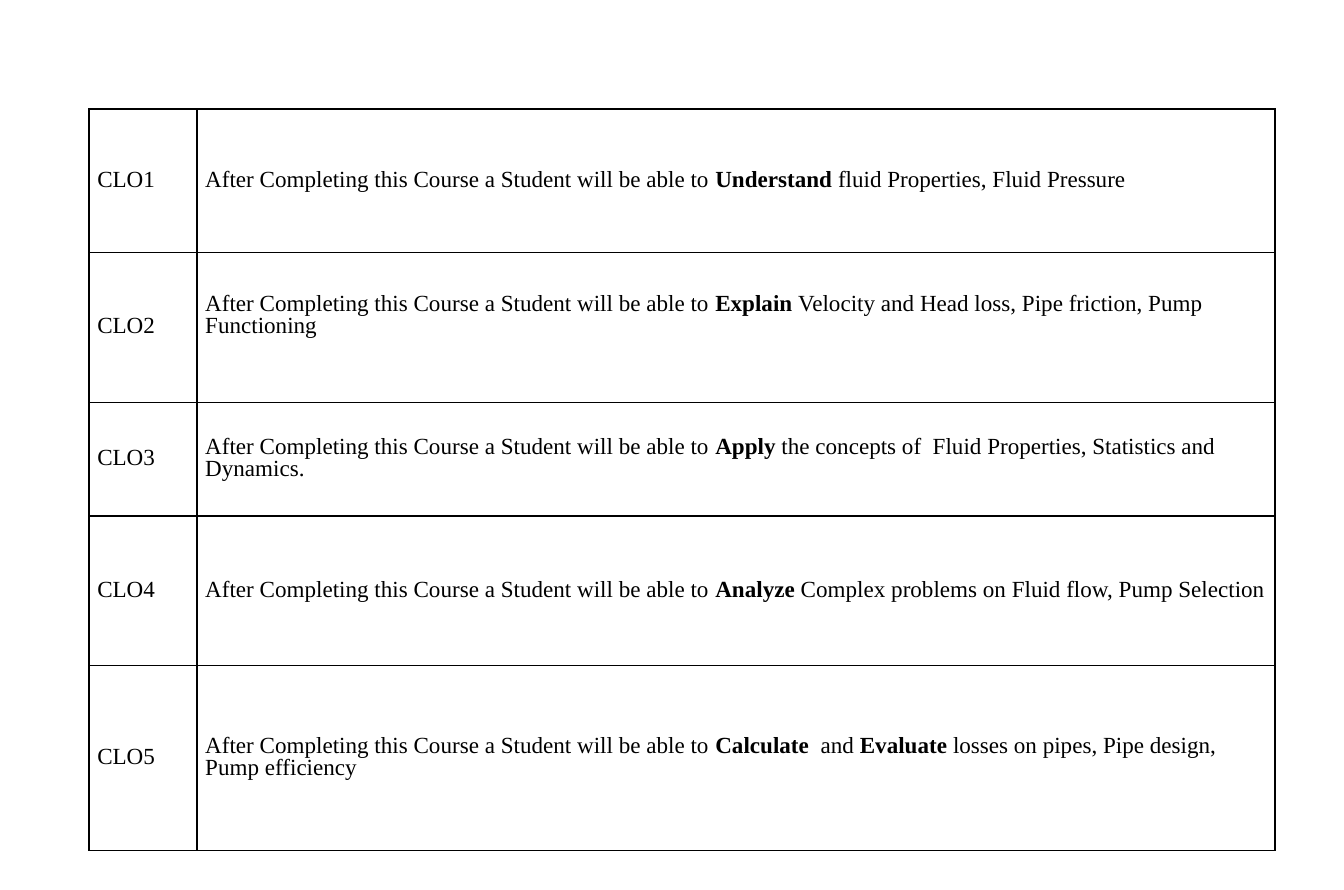
from lxml import etree
from pptx import Presentation
from pptx.dml.color import RGBColor
from pptx.enum.text import MSO_ANCHOR
from pptx.oxml.ns import qn
from pptx.util import Inches, Pt

MIDDLE = MSO_ANCHOR.MIDDLE
BLACK = "000000"
COLUMN_WIDTHS = [0.91, 9.09]
STEM = ("After Completing this Course a Student will be able to ", False)
OUTCOMES = [
    (1.21, 13.5, 0, [("Understand ", True), ("fluid Properties, Fluid Pressure", False)]),
    (1.26, 13.5, 0.19, [("Explain ", True),
                        ("Velocity and Head loss, Pipe friction, Pump Functioning", False)]),
    (0.96, 13.7, 0, [("Apply", True),
                     (" the concepts of  Fluid Properties, Statistics and Dynamics.", False)]),
    (1.26, 13.5, 0, [("Analyze", True),
                     (" Complex problems on Fluid flow, Pump Selection", False)]),
    (1.56, 13.5, 0, [("Calculate", True), ("  and ", False), ("Evaluate ", True),
                     ("losses on pipes, Pipe design, Pump efficiency", False)]),
]


def color(hex_value):
    return RGBColor.from_string(hex_value)


def apply_format(target, values):
    for attribute, value in values.items():
        setattr(target, attribute, value)


def add_borders(cell):
    properties = cell._tc.get_or_add_tcPr()
    for side in ("lnL", "lnR", "lnT", "lnB"):
        border = etree.SubElement(properties, qn(f"a:{side}"), w=str(Pt(1)))
        fill = etree.SubElement(border, qn("a:solidFill"))
        etree.SubElement(fill, qn("a:srgbClr"), val=BLACK)


def fill_cell(cell, phrases, spacing, bottom):
    add_borders(cell)
    cell.fill.background()
    apply_format(cell, {
        "vertical_anchor": MIDDLE, "margin_left": 0, "margin_right": 0,
        "margin_top": 0, "margin_bottom": Inches(bottom),
    })
    paragraph = cell.text_frame.paragraphs[0]
    paragraph.line_spacing = Pt(spacing)
    paragraph._p.get_or_add_pPr().set("marL", str(Inches(0.07)))
    for phrase, bold in phrases:
        run = paragraph.add_run()
        run.text = phrase
        apply_format(run.font, {"name": "Times New Roman", "size": Pt(14), "bold": bold})
        run.font.color.rgb = color(BLACK)


def add_outcomes_table(slide, left, top, width, height):
    table = slide.shapes.add_table(
        len(OUTCOMES), len(COLUMN_WIDTHS),
        Inches(left), Inches(top), Inches(width), Inches(height)).table
    apply_format(table, {"first_row": False, "horz_banding": False})
    for column, share in zip(table.columns, COLUMN_WIDTHS):
        column.width = Inches(width * share / sum(COLUMN_WIDTHS))
    for index, (row_height, spacing, bottom, phrases) in enumerate(OUTCOMES):
        table.rows[index].height = Inches(row_height)
        fill_cell(table.cell(index, 0), [(f"CLO{index + 1}", False)], spacing, 0)
        fill_cell(table.cell(index, 1), [STEM, *phrases], spacing, bottom)


def main():
    presentation = Presentation()
    apply_format(presentation, {"slide_width": Inches(11.33), "slide_height": Inches(7.5)})
    slide = presentation.slides.add_slide(presentation.slide_layouts[6])
    add_outcomes_table(slide, 0.75, 0.92, 10, 6.25)
    presentation.save("out.pptx")


if __name__ == "__main__":
    main()
